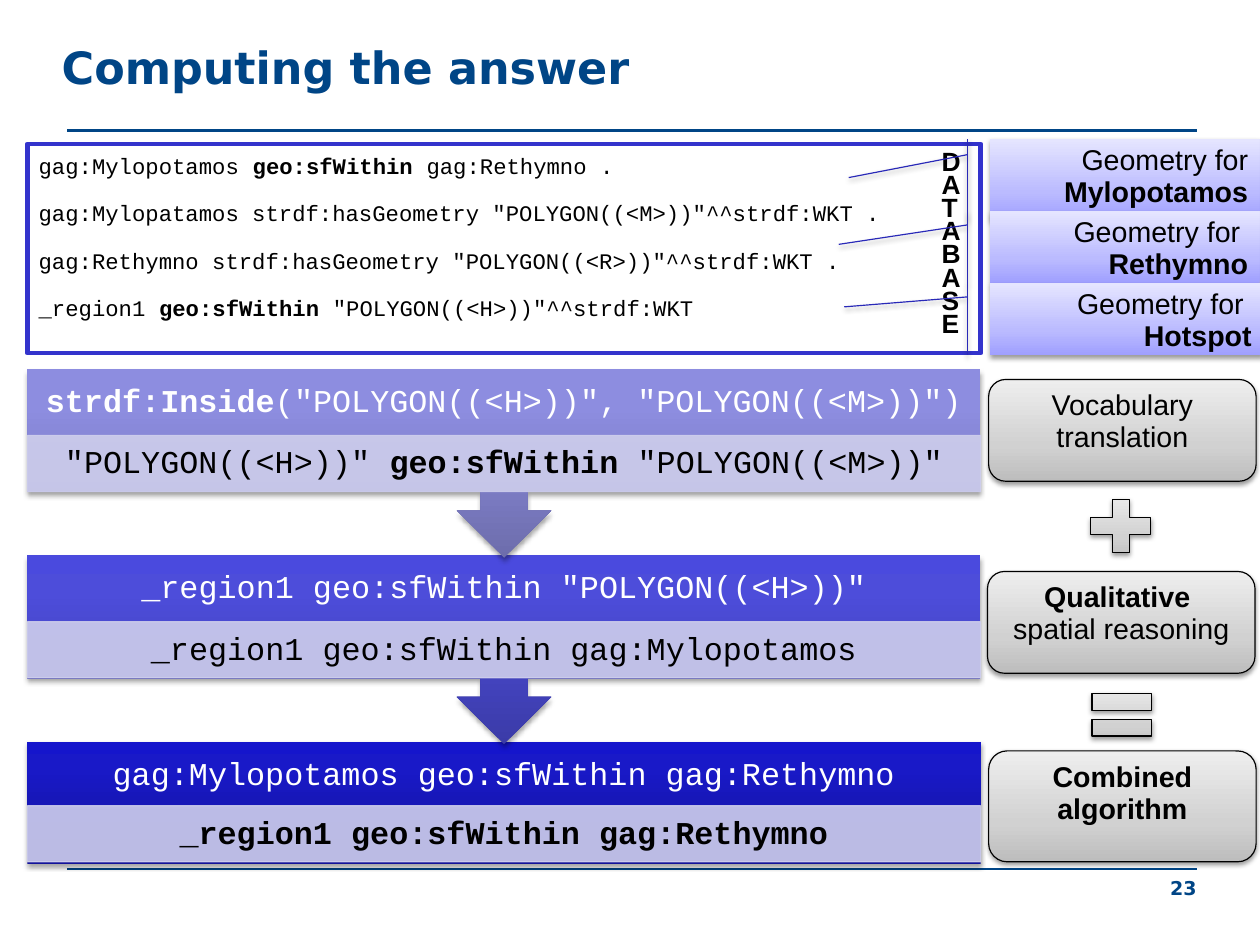
"""Builds the slide on computing the answer from database facts."""
from lxml.etree import SubElement
from pptx import Presentation
from pptx.dml.color import RGBColor
from pptx.enum.shapes import MSO_CONNECTOR as Link, MSO_SHAPE as Form
from pptx.enum.text import MSO_ANCHOR as Anchor, PP_ALIGN as Align
from pptx.oxml.ns import qn
from pptx.util import Cm, Inches, Pt

FACTS = [
    'gag:Mylopotamos *geo:sfWithin* gag:Rethymno .',
    'gag:Mylopatamos strdf:hasGeometry "POLYGON((<M>))"^^strdf:WKT .',
    'gag:Rethymno strdf:hasGeometry "POLYGON((<R>))"^^strdf:WKT .',
    '_region1 *geo:sfWithin* "POLYGON((<H>))"^^strdf:WKT',
]
STAGES = [
    ('*strdf:Inside*("POLYGON((<H>))", "POLYGON((<M>))")',
     '"POLYGON((<H>))" *geo:sfWithin* "POLYGON((<M>))"', "pale"),
    ('_region1 geo:sfWithin "POLYGON((<H>))"',
     '_region1 geo:sfWithin gag:Mylopotamos', "mid"),
    ('gag:Mylopotamos geo:sfWithin gag:Rethymno',
     '*_region1 geo:sfWithin gag:Rethymno*', "deep"),
]
STEPS = [
    (["Vocabulary translation"], 8.65, 3.32, 0.89),
    (["*Qualitative \n*spatial reasoning"], 8.64, 5, 0.89),
    (["*Combined*", "*algorithm*"], 8.65, 6.57, 0.97),
]
SIGNS = [(Form.MATH_PLUS, 9.45, 4.29), (Form.MATH_EQUAL, 9.46, 5.94)]
NOTES = [
    ("Geometry for *Mylopotamos*", 1.22, 2.36, 0.71, 0.47, -0.523),
    ("Geometry for \n*Rethymno*", 1.85, 2.36, 0.63, 0.458, -0.56),
    ("Geometry for \n*Hotspot*", 2.48, 2.39, 0.63, 0.326, -0.533),
]
RULES = [(7.6, 1.45), (1.14, 2.15)]
COLORS = {"navy": "004586", "frame": "3333CC", "edge": "2929B8",
          "body": "CECEEC", "black": "000000", "white": "FFFFFF"}
BLENDS = {
    "grey": [(0, "BDBDBD"), (35, "D1D1D1"), (100, "EEEEEE")],
    "lilac": [(0, "9F9FFF"), (35, "BBBBFF"), (100, "E5E5FF")],
    "pale": [(0, "6D6DAC"), (80, "8D8DE0"), (100, "8C8CE2")],
    "mid": [(0, "3B3BA8"), (80, "4D4DDA"), (100, "4A4ADE")],
    "deep": [(0, "13139A"), (80, "1919C8"), (100, "1515CC")],
}
LEFT, WIDE = 0.24, 8.34
SIDE, SLIM = 8.66, 2.34
TOP, PITCH, HEAD, BODY = 3.23, 1.63, 0.58, 0.49
MONO, SANS, TITLE = "Courier New", "Arial", "DejaVu Sans"

deck = Presentation()
deck.slide_width, deck.slide_height = Cm(28), Cm(21)
slide = deck.slides.add_slide(deck.slide_layouts[6])
shapes = slide.shapes


def rgb(name):
    return RGBColor.from_string(COLORS[name])


def write(shape, lines, font, size, color="black", align=Align.LEFT, space=1.0,
          after=0, anchor=Anchor.TOP, pad=(0.1, 0.05)):
    frame = shape.text_frame
    frame.word_wrap = True
    frame.vertical_anchor = anchor
    frame.margin_left = frame.margin_right = Inches(pad[0])
    frame.margin_top = frame.margin_bottom = Inches(pad[1])
    for row, line in enumerate(lines):
        para = frame.add_paragraph() if row else frame.paragraphs[0]
        para.alignment, para.line_spacing = align, space
        para.space_after = Pt(after)
        for part, chunk in enumerate(line.split("*")):
            for turn, text in enumerate(chunk.split("\n")):
                if turn:
                    para.add_line_break()
                if text:
                    run = para.add_run()
                    run.text = text
                    run.font.name, run.font.size = font, Pt(size)
                    run.font.bold = part % 2 == 1
                    run.font.color.rgb = rgb(color)


def label(box, lines, *args, **style):
    write(shapes.add_textbox(*map(Inches, box)), lines, *args, **style)


def draw(form, box, line=None, width=0.75):
    shape = shapes.add_shape(form, *map(Inches, box))
    shape.shadow.inherit = False
    if line:
        shape.line.color.rgb = rgb(line)
        shape.line.width = Pt(width)
    else:
        shape.line.fill.background()
    return shape


def blend(shape, name, alpha=38, dist=1.6):
    shape.fill.gradient()
    shape.fill.gradient_angle = 90
    props = shape.element.spPr
    props.find(qn("a:gradFill")).set("rotWithShape", "0")
    stops = props.find(".//" + qn("a:gsLst"))
    stops.clear()
    for spot, color in BLENDS[name]:
        stop = SubElement(stops, qn("a:gs"), pos=str(spot * 1000))
        SubElement(stop, qn("a:srgbClr"), val=color)
    cast = SubElement(props.find(qn("a:effectLst")), qn("a:outerShdw"),
                      blurRad=str(Pt(3.1)), dist=str(Pt(dist)),
                      dir="5400000", rotWithShape="0")
    tint = SubElement(cast, qn("a:srgbClr"), val=COLORS["black"])
    SubElement(tint, qn("a:alpha"), val=str(alpha * 1000))


for y, width in RULES:
    rule = shapes.add_connector(Link.STRAIGHT, Inches(0.59), Inches(y),
                                Inches(10.47), Inches(y))
    rule.line.color.rgb, rule.line.width = rgb("navy"), Pt(width)
    SubElement(rule.element.spPr, qn("a:effectLst"))

label((7.9, 7.68, 2.57, 0.42), ["*23*"], TITLE, 12, "navy", Align.RIGHT,
      0.98, pad=(0, 0))

store = draw(Form.RECTANGLE, (LEFT, 1.26, WIDE, 1.83), "frame", 3)
store.fill.solid()
store.fill.fore_color.rgb = rgb("white")
write(store, FACTS, MONO, 14, space=1.1, after=11.4)
label((8.14, 1.29, 0.44, 1.82), [f"*{c}*" for c in "DATABASE"], SANS, 16.6,
      space=0.73)

for lines, x, y, high in STEPS:
    step = draw(Form.ROUNDED_RECTANGLE, (x, y, SLIM, high), "black")
    blend(step, "grey")
    write(step, lines, SANS, 18, align=Align.CENTER, space=0.93)

for form, x, y in SIGNS:
    blend(draw(form, (x, y, 0.71, 0.63), "black"), "grey")

for row, (head, body, tone) in reversed(list(enumerate(STAGES))):
    y = TOP + row * PITCH
    last = row == len(STAGES) - 1
    form = Form.RECTANGLE if last else Form.UP_ARROW_CALLOUT
    block = draw(form, (LEFT, y, WIDE, 1.07 if last else 1.65))
    block.rotation = 0 if last else 180
    blend(block, tone, 35, 1.8)
    label((LEFT, y, WIDE, HEAD), [head], MONO, 20, "white", Align.CENTER, 0.9,
          anchor=Anchor.MIDDLE, pad=(0.16, 0.16))
    strip = (LEFT, y + (0.56 if last else HEAD), WIDE, BODY)
    band = draw(Form.RECTANGLE, strip, "body")
    band.fill.solid()
    band.fill.fore_color.rgb = rgb("body")
    for tint in band.element.spPr.iter(qn("a:srgbClr")):
        SubElement(tint, qn("a:alpha"), val="90000")
    label(strip, [body], MONO, 20, align=Align.CENTER, space=0.9,
          anchor=Anchor.MIDDLE, pad=(0.16, 0.03))

label((0.54, 0.1, 8.05, 1), ["*Computing the answer*"], TITLE, 28, "navy",
      space=0.97, anchor=Anchor.MIDDLE, pad=(0, 0))

for text, y, wide, high, drop, reach in NOTES:
    note = draw(Form.LINE_CALLOUT_1_ACCENT_BAR, (SIDE, y, wide, high), "edge")
    for spot, value in enumerate((0.188, -0.083, drop, reach)):
        note.adjustments[spot] = value
    blend(note, "lilac")
    write(note, [text], SANS, 18, align=Align.RIGHT, space=0.93)

deck.save("out.pptx")
